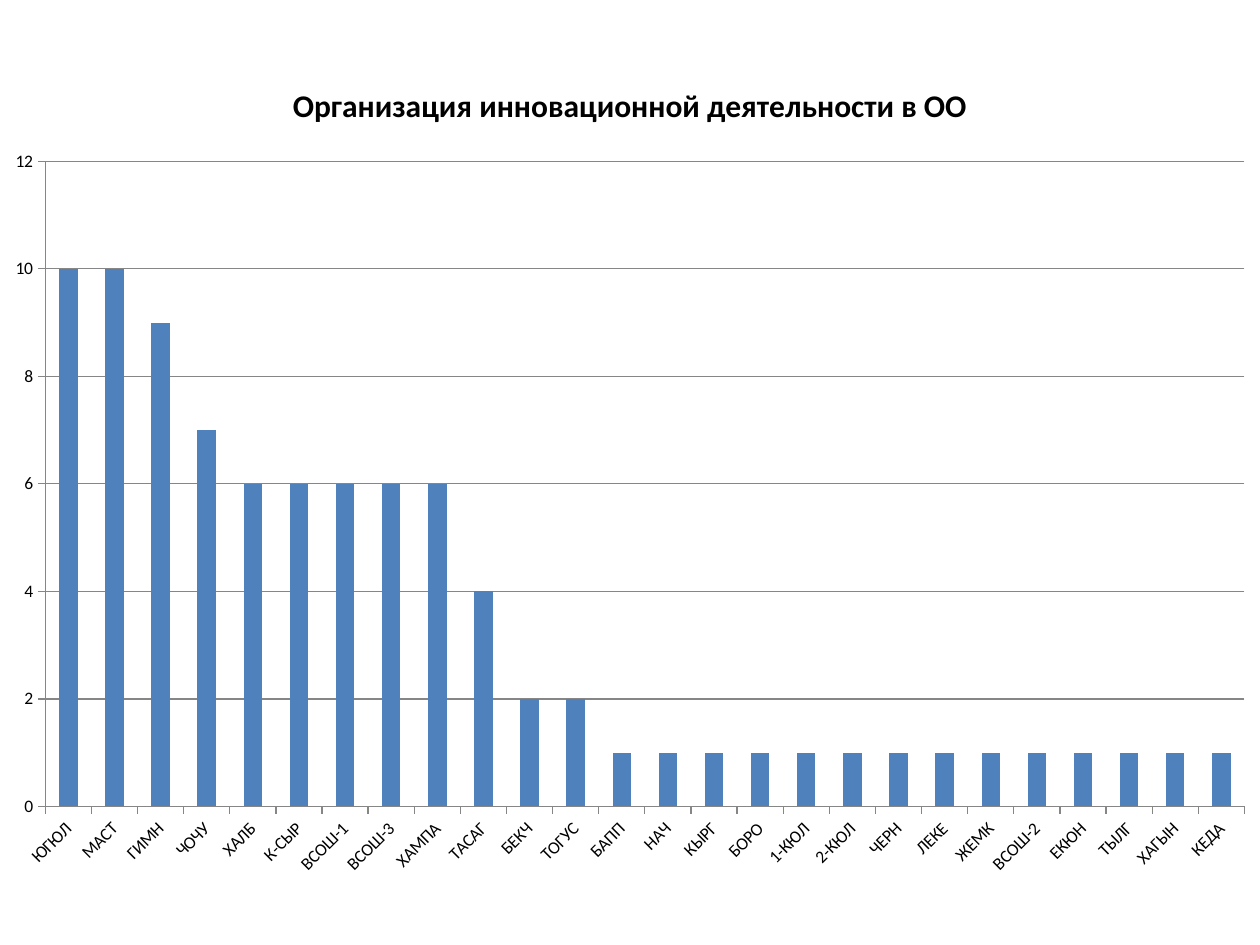
from dataclasses import dataclass

from pptx import Presentation
from pptx.chart.axis import _BaseAxis as Axis
from pptx.chart.data import CategoryChartData
from pptx.dml.color import RGBColor
from pptx.enum.chart import XL_CHART_TYPE as ChartType, XL_TICK_MARK as TickMark
from pptx.util import Inches, Pt

SLIDE_W, SLIDE_H = Inches(10), Inches(7.5)
BLACK, GREY, BLUE = "000000", "868686", "4F81BD"
FONT = "Calibri"
BLANK_LAYOUT = 6


@dataclass(frozen=True)
class Group:
    """Schools that share one score."""
    score: int
    schools: str


GROUPS = [
    Group(10, "ЮГЮЛ МАСТ"),
    Group(9, "ГИМН"),
    Group(7, "ЧОЧУ"),
    Group(6, "ХАЛБ К-СЫР ВСОШ-1 ВСОШ-3 ХАМПА"),
    Group(4, "ТАСАГ"),
    Group(2, "БЕКЧ ТОГУС"),
    Group(1, "БАПП НАЧ КЫРГ БОРО 1-КЮЛ 2-КЮЛ ЧЕРН ЛЕКЕ ЖЕМК ВСОШ-2 "
             "ЕКЮН ТЫЛГ ХАГЫН КЕДА"),
]


def color(value: str) -> RGBColor:
    return RGBColor.from_string(value)


def style_font(font, size: float, bold: bool = False) -> None:
    font.name, font.size, font.bold = FONT, Pt(size), bold
    font.color.rgb = color(BLACK)


def style_line(line) -> None:
    line.color.rgb = color(GREY)
    line.width = Pt(0.75)


def style_axis(axis: Axis, gridlines: bool) -> None:
    axis.major_tick_mark = TickMark.OUTSIDE
    axis.minor_tick_mark = TickMark.NONE
    axis.has_major_gridlines = gridlines
    style_line(axis.format.line)
    if gridlines:
        style_line(axis.major_gridlines.format.line)


def score_data() -> CategoryChartData:
    scores = [(school, group.score)
              for group in GROUPS for school in group.schools.split()]
    data = CategoryChartData()
    data.categories = [school for school, _ in scores]
    data.add_series("Series 1", [score for _, score in scores])
    return data


def main() -> None:
    prs = Presentation()
    prs.slide_width, prs.slide_height = SLIDE_W, SLIDE_H
    slide = prs.slides.add_slide(prs.slide_layouts[BLANK_LAYOUT])

    chart = slide.shapes.add_chart(
        ChartType.COLUMN_CLUSTERED, Inches(-0.08), Inches(0.43),
        Inches(10.16), Inches(6.64), score_data()).chart
    style_font(chart.font, 10)
    chart.has_legend = False

    heading = chart.chart_title.text_frame
    heading.text = "Организация инновационной деятельности в ОО"
    style_font(heading.paragraphs[0].font, 18, bold=True)

    style_axis(chart.category_axis, gridlines=False)
    style_axis(chart.value_axis, gridlines=True)
    chart.value_axis.minimum_scale, chart.value_axis.maximum_scale = 0, 12
    chart.value_axis.major_unit = 2

    columns = chart.plots[0]
    columns.gap_width = 150
    columns.vary_by_categories = False
    fill = columns.series[0].format.fill
    fill.solid()
    fill.fore_color.rgb = color(BLUE)

    prs.save("out.pptx")


if __name__ == "__main__":
    main()
